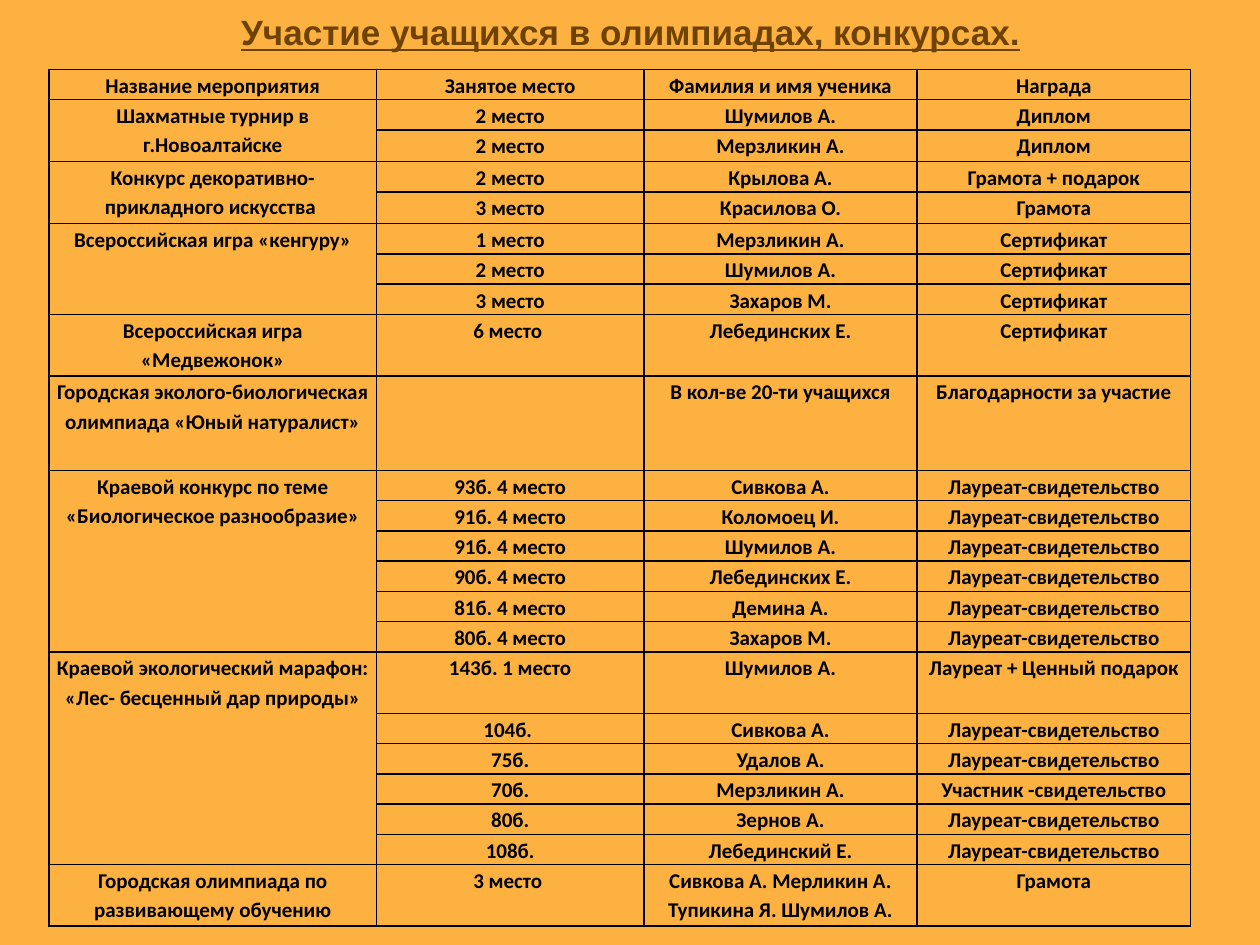
from pptx import Presentation
from pptx import util as u
from pptx.dml import color
from pptx.enum import text
from pptx.oxml import ns
from lxml import etree

COLORS = {"background": "FCB140", "title": "6D4202", "ink": "000000"}
LAUREATE = "Лауреат-свидетельство"
HEADINGS = ("Название мероприятия", [("Занятое место", "Фамилия и имя ученика", "Награда")])
EVENTS = [
    HEADINGS,
    ("Шахматные турнир в г.Новоалтайске", [
        ("2 место", "Шумилов А.", "Диплом"),
        ("2 место", "Мерзликин А.", "Диплом")]),
    ("Конкурс декоративно-прикладного искусства ", [
        ("2 место", "Крылова А.", "Грамота + подарок"),
        ("3 место", "Красилова О.", "Грамота")]),
    ("Всероссийская игра «кенгуру»", [
        ("1 место", "Мерзликин А.", "Сертификат"),
        ("2 место", "Шумилов А.", "Сертификат"),
        ("3 место", "Захаров М.", "Сертификат")]),
    ("Всероссийская игра «Медвежонок»", [
        ("6 место ", "Лебединских Е.", "Сертификат")]),
    ("Городская эколого-биологическая олимпиада «Юный натуралист»", [
        ("", "В кол-ве 20-ти учащихся", "Благодарности за участие")]),
    ("Краевой конкурс по теме «Биологическое разнообразие»", [
        ("93б. 4 место", "Сивкова А.", LAUREATE),
        ("91б. 4 место", "Коломоец И.", LAUREATE),
        ("91б. 4 место", "Шумилов А.", LAUREATE),
        ("90б. 4 место", "Лебединских Е.", LAUREATE),
        ("81б. 4 место", "Демина А.", LAUREATE),
        ("80б. 4 место", "Захаров М.", LAUREATE)]),
    ("Краевой экологический марафон: «Лес- бесценный дар природы»", [
        ("143б. 1 место", "Шумилов А.", "Лауреат + Ценный подарок"),
        ("104б. ", "Сивкова А.", LAUREATE),
        ("75б.", "Удалов А.", LAUREATE),
        ("70б.", "Мерзликин А.", "Участник -свидетельство"),
        ("80б.", "Зернов А.", LAUREATE),
        ("108б.", "Лебединский Е.", LAUREATE)]),
    ("Городская олимпиада по развивающему обучению", [
        ("3 место ", "Сивкова А. Мерликин А. Тупикина Я. Шумилов А.", "Грамота")]),
]
COLUMN_WIDTHS = [6.6, 5.39, 5.51, 5.51]
ROW_HEIGHT = 0.61
SPECIAL_HEIGHTS = {2: 0.64, 4: 0.64, 8: 1.24, 9: 1.9, 16: 1.24, 22: 1.24}


def style_paragraph(para, name, size, ink):
    para.alignment = text.PP_ALIGN.CENTER
    para.font.name = name
    para.font.size = u.Pt(size)
    para.font.bold = True
    para.font.color.rgb = color.RGBColor.from_string(COLORS[ink])


def add_borders(cell):
    properties = cell._tc.get_or_add_tcPr()
    for side in ("lnL", "lnR", "lnT", "lnB"):
        line = etree.SubElement(properties, ns.qn(f"a:{side}"), w=str(u.Pt(1)))
        fill = etree.SubElement(line, ns.qn("a:solidFill"))
        etree.SubElement(fill, ns.qn("a:srgbClr"), val=COLORS["ink"])


deck = Presentation()
deck.slide_width = u.Cm(25.4)
deck.slide_height = u.Cm(19.05)
page = deck.slides.add_slide(deck.slide_layouts[6])
page.background.fill.solid()
page.background.fill.fore_color.rgb = color.RGBColor.from_string(COLORS["background"])

row_count = sum(len(results) for _, results in EVENTS)
frame = page.shapes.add_table(row_count, len(COLUMN_WIDTHS), u.Cm(0.99), u.Cm(1.4),
                              u.Cm(sum(COLUMN_WIDTHS)), u.Cm(17.27))
table = frame.table
table.first_row = False
table.horz_banding = False
for column, width in zip(table.columns, COLUMN_WIDTHS):
    column.width = u.Cm(width)
for index, row in enumerate(table.rows):
    row.height = u.Cm(SPECIAL_HEIGHTS.get(index, ROW_HEIGHT))

top = 0
for event, results in EVENTS:
    table.cell(top, 0).text = event
    for offset, result in enumerate(results):
        for column, value in enumerate(result, start=1):
            table.cell(top + offset, column).text = value
    if len(results) > 1:
        table.cell(top, 0).merge(table.cell(top + len(results) - 1, 0))
    top += len(results)

for cell in table.iter_cells():
    cell.margin_left = cell.margin_right = u.Cm(0.08)
    cell.margin_top = cell.margin_bottom = 0
    add_borders(cell)
    cell.fill.background()
    para = cell.text_frame.paragraphs[0]
    para.line_spacing = 1.15
    style_paragraph(para, "Calibri", 12, "ink")

box = page.shapes.add_textbox(u.Cm(4.55), u.Cm(0.08), u.Cm(16.33), u.Cm(1.12))
box.text_frame.word_wrap = False
box.text_frame.auto_size = text.MSO_AUTO_SIZE.SHAPE_TO_FIT_TEXT
box.text_frame.vertical_anchor = text.MSO_ANCHOR.MIDDLE
para = box.text_frame.paragraphs[0]
para.text = "Участие учащихся в олимпиадах, конкурсах."
style_paragraph(para, "Arial", 20, "title")
para.font.underline = True

deck.save("out.pptx")
